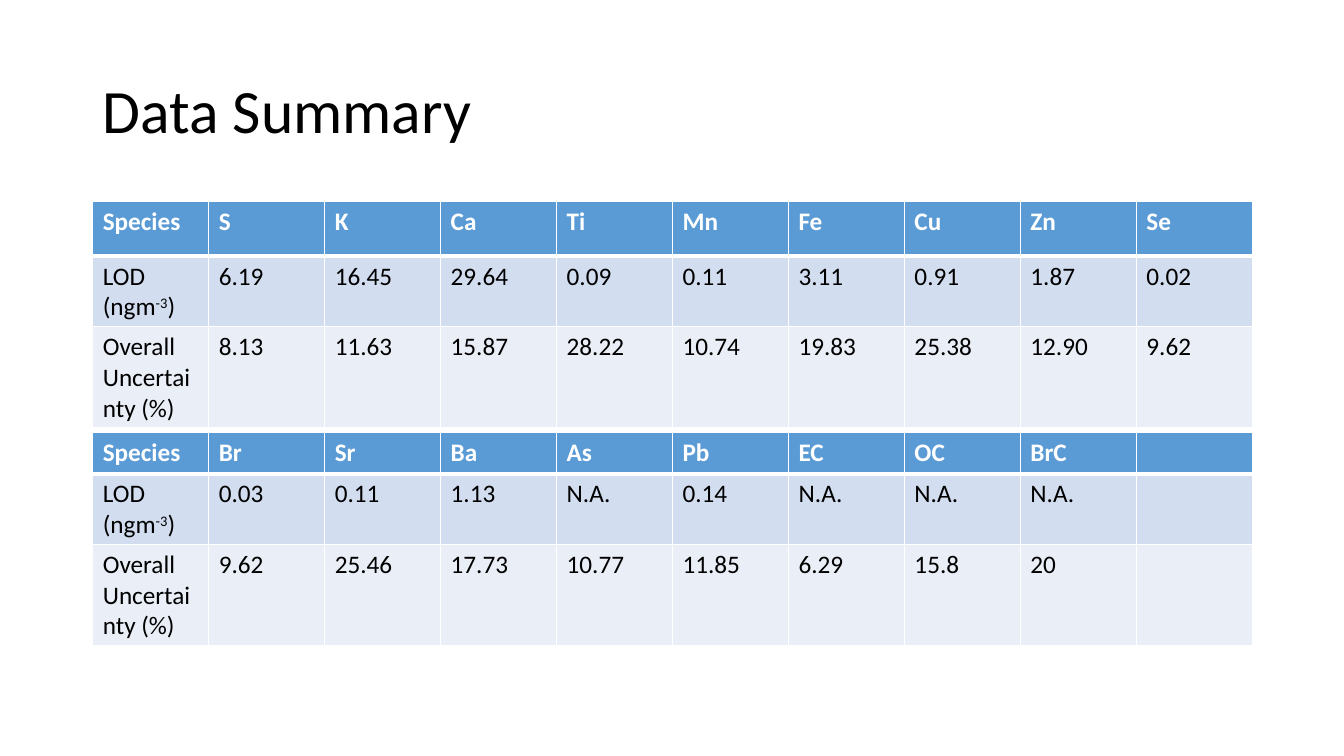
from lxml.etree import SubElement
from pptx import Presentation
from pptx.dml.color import RGBColor
from pptx.enum.text import MSO_ANCHOR
from pptx.oxml.ns import qn
from pptx.util import Inches, Pt

LEFT, WIDTH = 0.92, 11.5
LABELS = ["Species", "LOD (ngm^-3^)", "Overall Uncertainty (%)"]
FIRST_SPECIES = [
    ["S", "K", "Ca", "Ti", "Mn", "Fe", "Cu", "Zn", "Se"],
    ["6.19", "16.45", "29.64", "0.09", "0.11", "3.11", "0.91", "1.87", "0.02"],
    ["8.13", "11.63", "15.87", "28.22", "10.74", "19.83", "25.38", "12.90", "9.62"],
]
OTHER_SPECIES = [
    ["Br", "Sr", "Ba", "As", "Pb", "EC", "OC", "BrC", ""],
    ["0.03", "0.11", "1.13", "N.A.", "0.14", "N.A.", "N.A.", "N.A.", ""],
    ["9.62", "25.46", "17.73", "10.77", "11.85", "6.29", "15.8", "20", ""],
]


def rgb(hex_color):
    return RGBColor.from_string(hex_color)


class SlideBuilder:
    font = "Calibri"
    black, white = "000000", "FFFFFF"
    row_fills = ["5B9BD5", "D2DEEF", "EAEFF7"]

    def __init__(self, prs):
        self.s = prs.slides.add_slide(prs.slide_layouts[6])

    def format_run(self, r, size, color, bold=False):
        r.font.name = self.font
        r.font.size = Pt(size)
        r.font.bold = bold
        r.font.color.rgb = rgb(color)

    def title(self, text, left, top, width, height):
        sp = self.s.shapes.add_textbox(
            Inches(left), Inches(top), Inches(width), Inches(height))
        tf = sp.text_frame
        tf.word_wrap = True
        tf.vertical_anchor = MSO_ANCHOR.MIDDLE
        tf.text = text
        p = tf.paragraphs[0]
        p.line_spacing = 0.9
        self.format_run(p.runs[0], 44, self.black)

    def border(self, cell, side, points):
        ln = SubElement(cell._tc.get_or_add_tcPr(), qn(f"a:ln{side}"), w=str(Pt(points)))
        fill = SubElement(ln, qn("a:solidFill"))
        SubElement(fill, qn("a:srgbClr"), val=self.white)

    def cell(self, cell, text, row):
        """Fill one cell; text between carets is raised."""
        header = row == 0
        for side in "LRTB":
            thick = (header and side == "B") or (row == 1 and side == "T")
            self.border(cell, side, 3 if thick else 1)
        cell.fill.solid()
        cell.fill.fore_color.rgb = rgb(self.row_fills[row])
        p = cell.text_frame.paragraphs[0]
        p.font.size = Pt(18)
        for i, part in enumerate(text.split("^")):
            if not part:
                continue
            r = p.add_run()
            r.text = part
            self.format_run(r, 18, self.white if header else self.black, header)
            if i % 2:
                r._r.get_or_add_rPr().set("baseline", "30000")

    def table(self, values, left, top, width, heights):
        rows = [[label, *line] for label, line in zip(LABELS, values)]
        columns = len(rows[0])
        table = self.s.shapes.add_table(
            len(rows), columns, Inches(left), Inches(top),
            Inches(width), Inches(sum(heights))).table
        for column in table.columns:
            column.width = Inches(width / columns)
        for i, (line, height) in enumerate(zip(rows, heights)):
            table.rows[i].height = Inches(height)
            for j, text in enumerate(line):
                self.cell(table.cell(i, j), text, i)


def main():
    prs = Presentation()
    prs.slide_width, prs.slide_height = Inches(13.33), Inches(7.5)
    slide = SlideBuilder(prs)
    slide.title("Data Summary", LEFT, 0.4, WIDTH, 1.45)
    slide.table(FIRST_SPECIES, LEFT, 2, WIDTH, [0.54, 0.7, 1])
    slide.table(OTHER_SPECIES, LEFT, 4.29, WIDTH, [0.41, 0.7, 1])
    prs.save("out.pptx")


if __name__ == "__main__":
    main()
